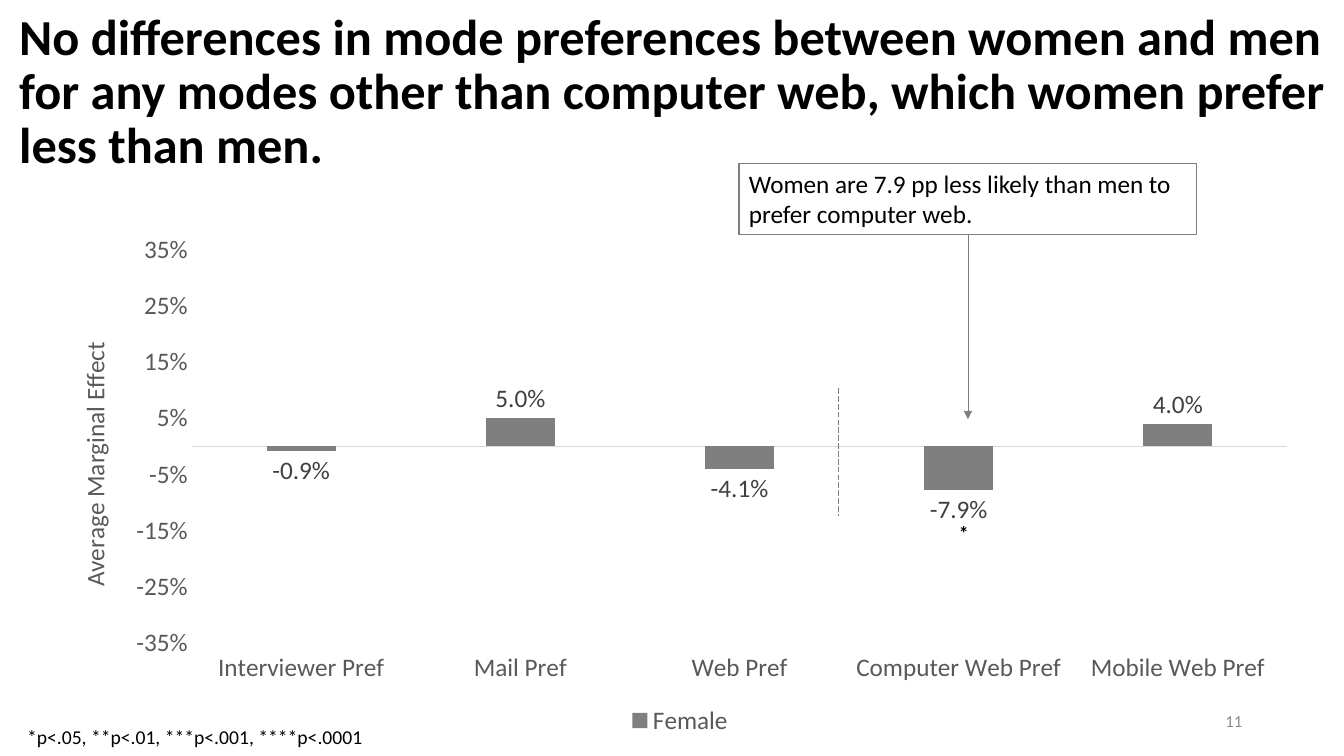
from lxml import etree
from pptx import Presentation
from pptx.chart.data import CategoryChartData
from pptx.dml.color import RGBColor
from pptx.enum import chart as ch, dml, shapes, text
from pptx.oxml import parse_xml
from pptx.oxml.ns import nsdecls, qn
from pptx.util import Inches, Pt

BLACK = RGBColor(0x00, 0x00, 0x00)
GRAY = RGBColor(0x7F, 0x7F, 0x7F)
AXIS_TEXT = RGBColor(0x59, 0x59, 0x59)
LABEL_TEXT = RGBColor(0x40, 0x40, 0x40)
AXIS_LINE = RGBColor(0xD9, 0xD9, 0xD9)
PAGE_TEXT = RGBColor(0x8C, 0x8C, 0x8C)
LEFT, CENTER, RIGHT = text.PP_ALIGN.LEFT, text.PP_ALIGN.CENTER, text.PP_ALIGN.RIGHT
TOP, MIDDLE = text.MSO_ANCHOR.TOP, text.MSO_ANCHOR.MIDDLE


def style(font, size, color, bold=False):
    values = {"name": "Calibri", "size": Pt(size), "bold": bold}
    for key, value in values.items():
        setattr(font, key, value)
    font.color.rgb = color


def write(shape, words, size, color, align=LEFT, anchor=TOP, bold=False):
    frame = shape.text_frame
    frame.text = words
    values = {"word_wrap": True, "auto_size": text.MSO_AUTO_SIZE.NONE, "vertical_anchor": anchor}
    for key, value in values.items():
        setattr(frame, key, value)
    frame.paragraphs[0].alignment = align
    style(frame.paragraphs[0].runs[0].font, size, color, bold)


prs = Presentation()
prs.slide_width, prs.slide_height = Inches(13.33), Inches(7.5)
slide = prs.slides.add_slide(prs.slide_layouts[5])

headline = slide.shapes.title
box = {"left": 0.09, "top": 0, "width": 13.25, "height": 1.85}
for key, value in box.items():
    setattr(headline, key, Inches(value))
write(headline, "No differences in mode preferences between women and men for any modes "
      "other than computer web, which women prefer less than men.",
      36, BLACK, anchor=MIDDLE, bold=True)
headline.text_frame.paragraphs[0].line_spacing = 0.9

effects = CategoryChartData(number_format="0.0%")
effects.categories = ["Interviewer Pref", "Mail Pref", "Web Pref",
                      "Computer Web Pref", "Mobile Web Pref"]
effects.add_series("Female", [-0.009, 0.05, -0.041, -0.079, 0.04])
chart = slide.shapes.add_chart(
    ch.XL_CHART_TYPE.COLUMN_CLUSTERED, Inches(0.47), Inches(2.22),
    Inches(12.55), Inches(5.13), effects).chart
style(chart.font, 18, AXIS_TEXT)
chart.has_title = False
chart.has_legend = True
chart.legend.position = ch.XL_LEGEND_POSITION.BOTTOM
chart.legend.include_in_layout = False
style(chart.legend.font, 18, AXIS_TEXT)

modes = chart.category_axis
modes.tick_label_position = ch.XL_TICK_LABEL_POSITION.LOW
modes.format.line.color.rgb = AXIS_LINE
modes.format.line.width = Pt(0.75)
margin = chart.value_axis
scale = {"minimum_scale": -0.35, "maximum_scale": 0.35, "major_unit": 0.1,
         "has_major_gridlines": False}
for key, value in scale.items():
    setattr(margin, key, value)
margin.format.line.fill.background()
margin.tick_labels.number_format = "0%"
margin.tick_labels.number_format_is_linked = False
for axis in (modes, margin):
    axis.major_tick_mark = axis.minor_tick_mark = ch.XL_TICK_MARK.NONE
    style(axis.tick_labels.font, 18, AXIS_TEXT)
margin.axis_title.text_frame.text = "Average Marginal Effect"
style(margin.axis_title.text_frame.paragraphs[0].runs[0].font, 18, AXIS_TEXT)

plot = chart.plots[0]
plot.gap_width, plot.overlap, plot.vary_by_categories = 219, -27, False
female = plot.series[0]
female.invert_if_negative = False
female.format.fill.solid()
female.format.fill.fore_color.rgb = GRAY
labels = female.data_labels
formats = {"show_value": True, "number_format": "0.0%", "number_format_is_linked": False,
           "position": ch.XL_LABEL_POSITION.OUTSIDE_END}
for key, value in formats.items():
    setattr(labels, key, value)
style(labels.font, 18, LABEL_TEXT)

plot_area = chart.element.find(".//" + qn("c:plotArea"))
axis_title = plot_area.find(".//" + qn("c:title"))
layouts = [
    (plot_area, 0, {"layoutTarget": "inner", "xMode": "edge", "yMode": "edge",
                    "x": 0.114, "y": 0.05, "w": 0.866, "h": 0.76}),
    (axis_title, 1, {"xMode": "edge", "yMode": "edge", "x": 0.02, "y": 0.22}),
]
for parent, index, places in layouts:
    for old in parent.findall(qn("c:layout")):
        parent.remove(old)
    layout = parse_xml(f"<c:layout {nsdecls('c')}><c:manualLayout/></c:layout>")
    for key, value in places.items():
        etree.SubElement(layout[0], qn("c:" + key)).set("val", str(value))
    parent.insert(index, layout)

notes = [
    ("11", 9.42, 6.95, 3, 0.4, 12, PAGE_TEXT, RIGHT, MIDDLE, False),
    ("*", 9.15, 5.12, 0.82, 0.28, 14, BLACK, CENTER, TOP, True),
    ("*p<.05, **p<.01, ***p<.001, ****p<.0001", 0.17, 7.14, 4.56, 0.34,
     14, BLACK, LEFT, TOP, False),
]
for words, left, top, width, height, *look in notes:
    note = slide.shapes.add_textbox(Inches(left), Inches(top), Inches(width), Inches(height))
    write(note, words, *look)

callout = slide.shapes.add_shape(shapes.MSO_SHAPE.RECTANGLE, Inches(7.33), Inches(1.62),
                                 Inches(4.54), Inches(0.71))
callout.shadow.inherit = False
callout.fill.background()
callout.line.color.rgb = GRAY
callout.line.width = Pt(0.75)
write(callout, "Women are 7.9 pp less likely than men to prefer computer web.", 18, BLACK)

pointer, divider = [
    slide.shapes.add_connector(shapes.MSO_CONNECTOR.STRAIGHT, Inches(x), Inches(start),
                               Inches(x), Inches(end))
    for x, start, end in [(9.6, 2.33, 4.16), (8.32, 3.85, 5.12)]]
for rule in (pointer, divider):
    rule.line.color.rgb = GRAY
    rule.line.width = Pt(0.5)
    etree.SubElement(rule.element.spPr, qn("a:effectLst"))
pointer.begin_connect(callout, 2)
etree.SubElement(pointer.line._get_or_add_ln(), qn("a:tailEnd")).set("type", "triangle")
divider.line.dash_style = dml.MSO_LINE.LONG_DASH

prs.save("out.pptx")
